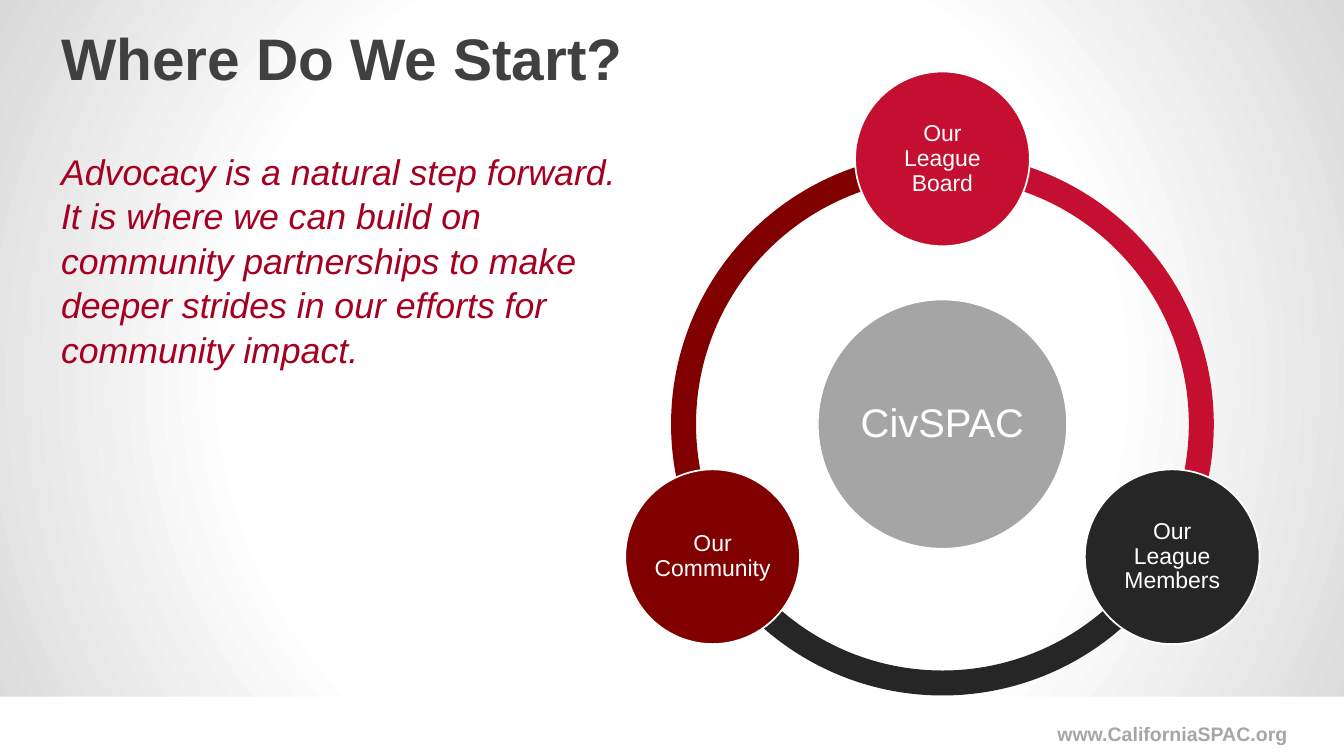
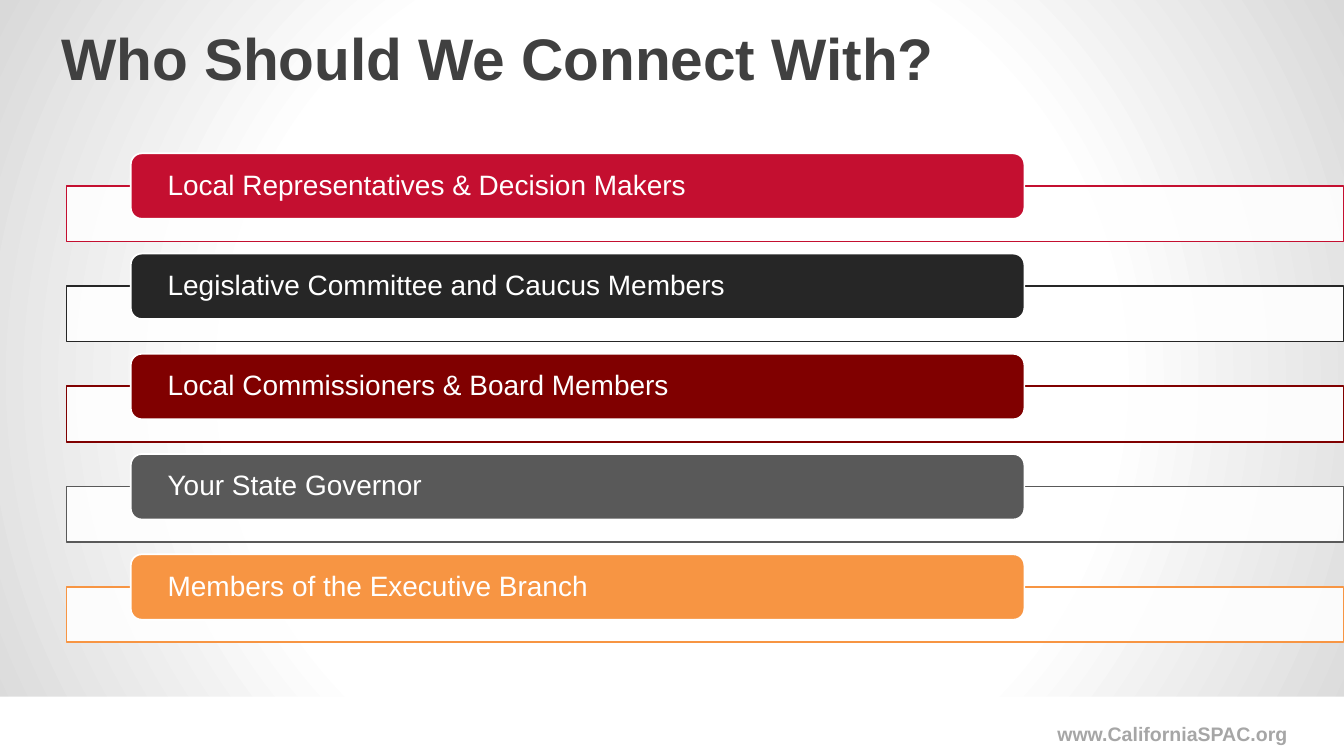
import math
from dataclasses import dataclass
from typing import NamedTuple

from lxml import etree
from pptx import Presentation, util as u
from pptx.dml.color import RGBColor
from pptx.enum import shapes, text
from pptx.oxml.ns import qn

PX = 9144  # EMU per px, 100 px to the inch
MS = shapes.MSO_SHAPE
AL = text.PP_ALIGN
ANC = text.MSO_ANCHOR


@dataclass(frozen=True)
class Theme:
    font: str = "Arial"
    white: str = "FFFFFF"
    shade: str = "D9D9D9"
    title: str = "404040"
    quote: str = "A50021"
    footer: str = "A6A6A6"
    hub: str = "A5A5A5"
    red: str = "C40F30"
    black: str = "262626"
    maroon: str = "800000"
    gray: str = "595959"
    orange: str = "F79543"
    title_pt: int = 69
    hub_pt: int = 47
    body_pt: int = 42
    bar_pt: int = 33
    node_pt: int = 27
    footer_pt: int = 23
    line_pt: int = 2


T = Theme()


class Box(NamedTuple):
    x: int
    y: int
    w: int
    h: int

    def emu(self) -> list[int]:
        return [v * PX for v in self]


@dataclass(frozen=True)
class Style:
    size: int
    color: str = T.white
    bold: bool = False
    italic: bool = False
    align: int = AL.LEFT
    anchor: int = ANC.TOP
    spacing: float = 1.0
    inset_x: int = 0
    inset_y: int = 0


class Item(NamedTuple):
    label: str
    color: str


TITLE = Style(T.title_pt, T.title, bold=True, spacing=0.75, inset_x=8, inset_y=8)
BODY = Style(T.body_pt, T.quote, italic=True, spacing=1.04, inset_x=8, inset_y=8)
FOOTER = Style(T.footer_pt, T.footer, bold=True, align=AL.RIGHT)
HUB = Style(T.hub_pt, align=AL.CENTER, anchor=ANC.MIDDLE, spacing=0.9, inset_x=7, inset_y=7)
NODE = Style(T.node_pt, align=AL.CENTER, anchor=ANC.MIDDLE, spacing=0.9, inset_x=4, inset_y=4)
BAR = Style(T.bar_pt, anchor=ANC.MIDDLE, spacing=0.9, inset_x=55)

SLIDE_W, SLIDE_H = 2199, 1237

NODES = [
    Item("Our League Board", T.red),
    Item("Our League Members", T.black),
    Item("Our Community", T.maroon),
]
BARS = [
    Item("Local Representatives & Decision Makers", T.red),
    Item("Legislative Committee and Caucus Members", T.black),
    Item("Local Commissioners & Board Members", T.maroon),
    Item("Your State Governor", T.gray),
    Item("Members of the Executive Branch", T.orange),
]


def write(sp, label: str, st: Style) -> None:
    tf = sp.text_frame
    tf.text = label
    tf.word_wrap = True
    tf.vertical_anchor = st.anchor
    tf.margin_left = tf.margin_right = st.inset_x * PX
    tf.margin_top = tf.margin_bottom = st.inset_y * PX
    p = tf.paragraphs[0]
    p.alignment = st.align
    p.line_spacing = st.spacing
    f = p.runs[0].font
    f.name, f.size, f.bold, f.italic = T.font, u.Pt(st.size), st.bold, st.italic
    f.color.rgb = RGBColor.from_string(st.color)


def add_text(s, box: Box, label: str, st: Style) -> None:
    write(s.shapes.add_textbox(*box.emu()), label, st)


def add_shape(s, kind: int, box: Box, fill: str, line: str | None = None):
    sp = s.shapes.add_shape(kind, *box.emu())
    sp.shadow.inherit = False
    sp.fill.solid()
    sp.fill.fore_color.rgb = RGBColor.from_string(fill)
    if line:
        sp.line.color.rgb = RGBColor.from_string(line)
        sp.line.width = u.Pt(T.line_pt)
    else:
        sp.line.fill.background()
    return sp


def circle(cx: float, cy: float, r: int) -> Box:
    return Box(round(cx - r), round(cy - r), 2 * r, 2 * r)


def set_background(master) -> None:
    """Radial gradient, white in the middle and grey at the edges."""
    master.background.fill.gradient()
    grad = master.element.find(".//" + qn("p:bgPr") + "/" + qn("a:gradFill"))
    for child in list(grad):
        grad.remove(child)
    stops = etree.SubElement(grad, qn("a:gsLst"))
    for pos, color in ((0, T.white), (57, T.white), (100, T.shade)):
        gs = etree.SubElement(stops, qn("a:gs"), pos=str(pos * 1000))
        etree.SubElement(gs, qn("a:srgbClr"), val=color)
    radial = etree.SubElement(grad, qn("a:path"), path="circle")
    etree.SubElement(radial, qn("a:fillToRect"), {side: "50000" for side in "ltrb"})


def new_slide(prs, title: str):
    """Blank slide with the shared footer band, web address and title."""
    s = prs.slides.add_slide(prs.slide_layouts[6])
    add_shape(s, MS.RECTANGLE, Box(0, 1140, SLIDE_W, 97), T.white)
    add_text(s, Box(1411, 1182, 696, 41), "www.CaliforniaSPAC.org", FOOTER)
    add_text(s, Box(92, 55, 2015, 124), title, TITLE)
    return s


def add_cycle(s, hub: str, nodes: list[Item]) -> None:
    cx, cy, orbit = 1542, 694, 434
    step = 360 / len(nodes)
    angles = [(270 + i * step) % 360 for i in range(len(nodes))]
    # Ring: one arc from each node to the next
    for node, angle in zip(nodes, angles):
        arc = add_shape(s, MS.BLOCK_ARC, circle(cx, cy, 444), node.color)
        arc.adjustments[0] = angle * 0.6  # 60000 units a degree, scaled by 100000
        arc.adjustments[1] = (angle + step) % 360 * 0.6
        arc.adjustments[2] = 0.046
    # Hub and nodes
    write(add_shape(s, MS.OVAL, circle(cx, cy, 204), T.hub, T.white), hub, HUB)
    for node, angle in zip(nodes, angles):
        a = math.radians(angle)
        box = circle(cx + orbit * math.cos(a), cy + orbit * math.sin(a), 143)
        write(add_shape(s, MS.OVAL, box, node.color, T.white), node.label, NODE)


def add_bars(s, bars: list[Item]) -> None:
    top, pitch = 251, 164
    for i, item in enumerate(bars):
        y = top + i * pitch
        # Translucent frame behind the bar
        frame = add_shape(s, MS.RECTANGLE, Box(109, y + 53, 2089, 91), T.white, item.color)
        color = frame.fill._xPr.find(qn("a:solidFill"))[0]
        etree.SubElement(color, qn("a:alpha"), val="89000")
        bar = add_shape(s, MS.ROUNDED_RECTANGLE, Box(214, y, 1462, 107), item.color, T.white)
        bar.adjustments[0] = 0.167
        write(bar, item.label, BAR)


def main() -> None:
    prs = Presentation()
    prs.slide_width, prs.slide_height = SLIDE_W * PX, SLIDE_H * PX
    set_background(prs.slide_master)

    # Slide 1: statement and cycle
    s = new_slide(prs, "Where Do We Start?")
    add_text(
        s,
        Box(92, 234, 956, 770),
        "Advocacy is a natural step forward. It is where we can build on community "
        "partnerships to make deeper strides in our efforts for community impact.",
        BODY,
    )
    add_cycle(s, "CivSPAC", NODES)

    # Slide 2: list of contacts
    s = new_slide(prs, "Who Should We Connect With?")
    add_bars(s, BARS)

    prs.save("out.pptx")


if __name__ == "__main__":
    main()
